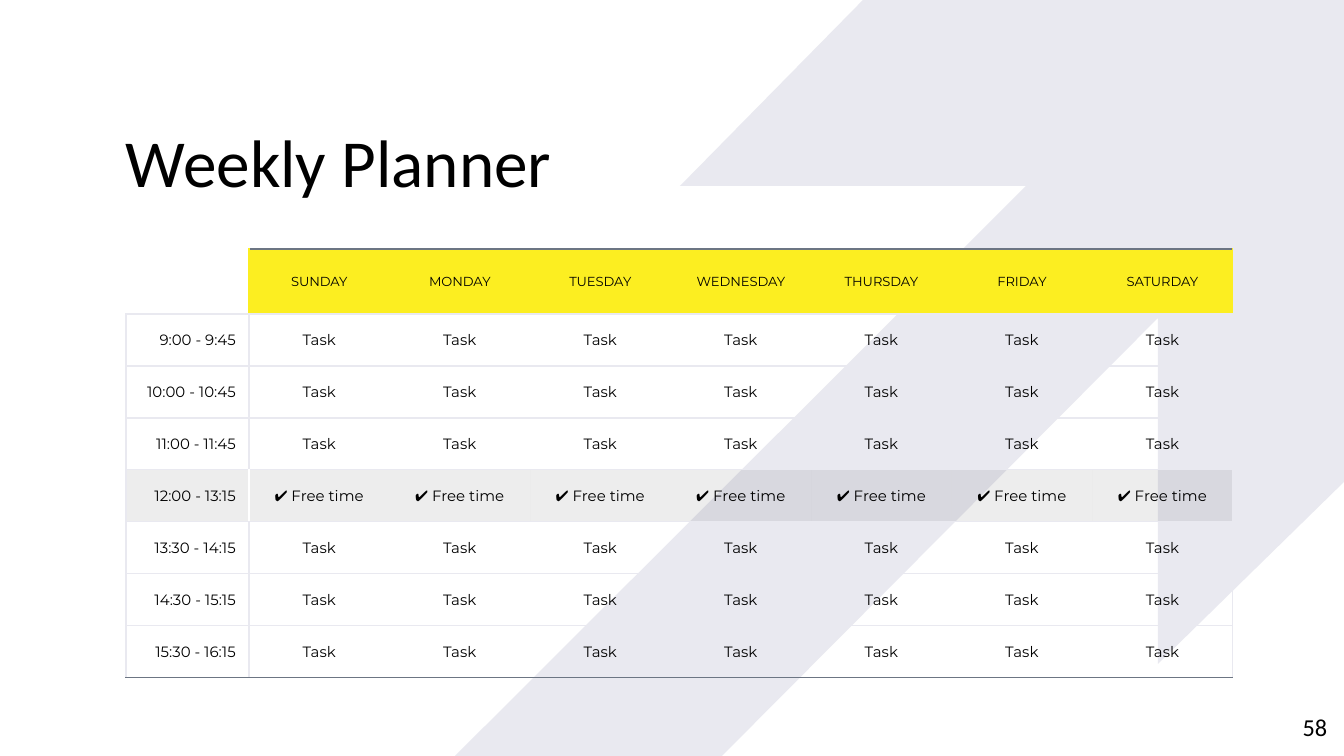
from lxml.etree import SubElement
from pptx import Presentation
from pptx.dml.color import RGBColor
from pptx.enum.text import MSO_ANCHOR, PP_ALIGN
from pptx.oxml.ns import qn
from pptx.util import Pt

SCALE = 9144000 / 1344  # EMU per px
W, H = 1344, 756

BLACK = RGBColor(0x00, 0x00, 0x00)
WHITE = RGBColor(0xFF, 0xFF, 0xFF)
LAVENDER = RGBColor(0xE9, 0xE9, 0xF0)
YELLOW = RGBColor(0xFC, 0xEE, 0x21)
SLATE = RGBColor(0x6C, 0x75, 0x83)

NO_GRID_STYLE = "{2D5ABB26-0587-4C30-8999-92F81FD0307C}"
DAYS = ["SUNDAY", "MONDAY", "TUESDAY", "WEDNESDAY", "THURSDAY", "FRIDAY", "SATURDAY"]
TIMES = ["9:00 - 9:45", "10:00 - 10:45", "11:00 - 11:45", "12:00 - 13:15",
         "13:30 - 14:15", "14:30 - 15:15", "15:30 - 16:15"]
FREE_ROW = 4
HEADER_H, ROW_H, TIME_W, PAD = 65, 52, 123, 13


def px(n):
    return round(n * SCALE)


def style_runs(p, font, size):
    for r in p.runs:
        r.font.name = font
        r.font.size = Pt(size)
        r.font.color.rgb = BLACK


def add_backdrop(s, x, y, w, h):
    """Angular band filling the right side of the box."""
    points = [(408, 0), (225, 186), (571, 186), (0, h), (267, h),
              (703, 318), (703, 664), (w, 482), (w, 0)]
    points = [(px(x + dx), px(y + dy)) for dx, dy in points]
    builder = s.shapes.build_freeform(*points[0], scale=1.0)
    builder.add_line_segments(points[1:], close=True)
    sp = builder.convert_to_shape()
    sp.shadow.inherit = False
    sp.fill.solid()
    sp.fill.fore_color.rgb = LAVENDER
    sp.line.fill.background()


def add_text(s, x, y, w, h, text, size, anchor, align, spacing=None):
    tf = s.shapes.add_textbox(px(x), px(y), px(w), px(h)).text_frame
    tf.word_wrap = True
    tf.margin_left = tf.margin_right = tf.margin_top = tf.margin_bottom = 0
    tf.vertical_anchor = anchor
    p = tf.paragraphs[0]
    p.text = text
    p.alignment = align
    p.line_spacing = spacing
    style_runs(p, "Calibri", size)


def set_borders(cell, **colors):
    """Draw the given sides and clear the others."""
    tcPr = cell._tc.get_or_add_tcPr()
    for side in ("L", "R", "T", "B"):
        ln = SubElement(tcPr, qn(f"a:ln{side}"), w=str(Pt(0.75)))
        color = colors.get(side)
        if color is None:
            SubElement(ln, qn("a:noFill"))
        else:
            fill = SubElement(ln, qn("a:solidFill"))
            SubElement(fill, qn("a:srgbClr"), val=str(color))


def cell_borders(row, col, last_row, last_col):
    if row == 0 and col == 0:
        return {"R": YELLOW, "B": LAVENDER}
    if row == 0:
        sides = {"T": SLATE, "B": LAVENDER}
        edge = divider = YELLOW
    else:
        sides = {"T": LAVENDER, "B": SLATE if row == last_row else LAVENDER}
        edge = LAVENDER
        divider = WHITE if row == FREE_ROW else LAVENDER
    if col == 0:
        sides.update(L=edge, R=divider)
    elif col == 1:
        sides["L"] = divider
    elif col == last_col:
        sides["R"] = edge
    return sides


def fill_cell(cell, row, col):
    if row == 0 and col > 0:
        cell.fill.solid()
        cell.fill.fore_color.rgb = YELLOW
    elif row == FREE_ROW:
        cell.fill.solid()
        cell.fill.fore_color.rgb = BLACK
        color = cell._tc.tcPr.find(qn("a:solidFill")).find(qn("a:srgbClr"))
        SubElement(color, qn("a:alpha"), val="7000")
    else:
        cell.fill.background()


def add_planner(s, x, y, w):
    rows = [[""] + DAYS]
    for i, time in enumerate(TIMES, 1):
        rows.append([time] + ["✔ Free time" if i == FREE_ROW else "Task"] * len(DAYS))
    last_row, last_col = len(TIMES), len(DAYS)

    height = HEADER_H + ROW_H * last_row
    frame = s.shapes.add_table(last_row + 1, last_col + 1, px(x), px(y), px(w), px(height))
    table = frame.table
    table.first_row = table.horz_banding = False
    table._tbl.tblPr.find(qn("a:tableStyleId")).text = NO_GRID_STYLE
    for i, column in enumerate(table.columns):
        column.width = px(TIME_W) if i == 0 else px((w - TIME_W) / last_col)

    for i, texts in enumerate(rows):
        table.rows[i].height = px(ROW_H if i else HEADER_H)
        for j, text in enumerate(texts):
            cell = table.cell(i, j)
            cell.margin_left = cell.margin_right = px(PAD)
            cell.margin_top = cell.margin_bottom = px(PAD)
            cell.vertical_anchor = MSO_ANCHOR.MIDDLE
            set_borders(cell, **cell_borders(i, j, last_row, last_col))
            fill_cell(cell, i, j)
            p = cell.text_frame.paragraphs[0]
            p.alignment = PP_ALIGN.CENTER if j else PP_ALIGN.RIGHT
            if text:
                p.text = text
                style_runs(p, "Montserrat", 8 if i else 7)
            else:
                p.font.size = Pt(7)


def main():
    prs = Presentation()
    prs.slide_width, prs.slide_height = px(W), px(H)
    s = prs.slides.add_slide(prs.slide_layouts[6])

    # Background
    add_backdrop(s, 455, 0, 889, H)
    # Title and page number
    add_text(s, 126, 128, 899, 74, "Weekly Planner", 36, MSO_ANCHOR.BOTTOM, PP_ALIGN.LEFT, 0.9)
    add_text(s, 1246, 698, 81, 58, "58", 13, MSO_ANCHOR.MIDDLE, PP_ALIGN.RIGHT)
    # Timetable
    add_planner(s, 126, 249, 1107)

    prs.save("out.pptx")


if __name__ == "__main__":
    main()
